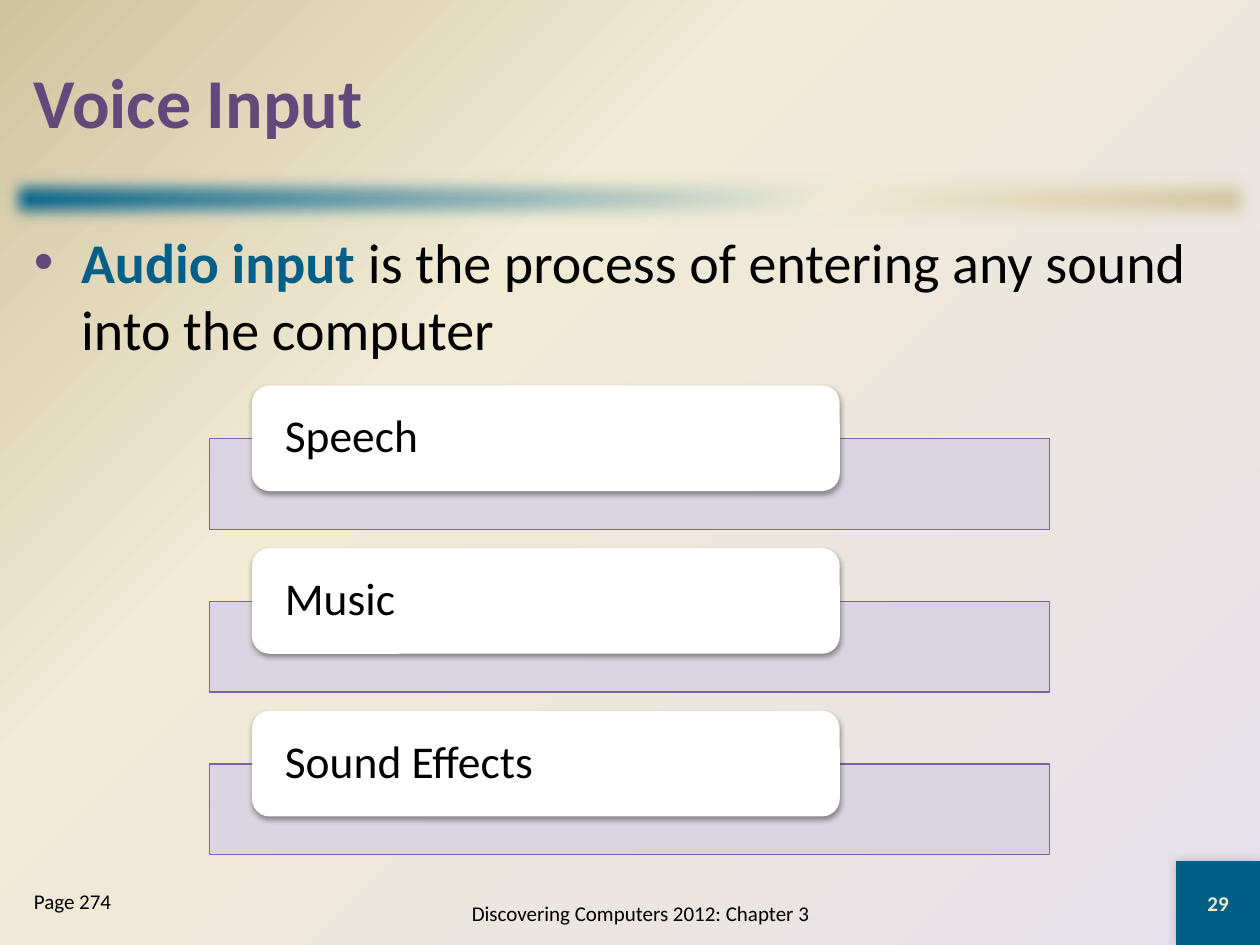
from pptx import Presentation
from pptx.dml.color import RGBColor
from pptx.enum.shapes import MSO_SHAPE
from pptx.enum.text import MSO_ANCHOR, MSO_AUTO_SIZE, PP_ALIGN
from pptx.oxml import parse_xml
from pptx.oxml.ns import nsdecls, qn
from pptx.util import Cm, Pt

COLORS = {
    "purple": "604A7B",
    "teal": "005F86",
    "black": "000000",
    "white": "FFFFFF",
    "cream": "F0EBD5",
    "sand": "D1C39F",
    "lavender": "E6E0EC",
    "band": "D8D3E0",
    "band_line": "8064A2",
    "number": "EEEBCA",
}


def format_run(r, size, color, bold=False):
    r.font.name = "Calibri"
    r.font.size = Pt(size)
    r.font.bold = bold
    r.font.color.rgb = RGBColor.from_string(COLORS[color])


def gradient(first, direction):
    stops = "".join(
        f'<a:gs pos="{pos * 1000}"><a:srgbClr val="{COLORS[name]}"/></a:gs>'
        for pos, name in ((0, first), (65, "cream"), (100, "sand"))
    )
    return parse_xml(
        f'<a:gradFill rotWithShape="1" {nsdecls("a")}><a:gsLst>{stops}</a:gsLst>{direction}</a:gradFill>'
    )


prs = Presentation()
prs.slide_width, prs.slide_height = Cm(25.4), Cm(19.05)
s = prs.slides.add_slide(prs.slide_layouts[3])
title, body, page = s.placeholders

s.background.fill.solid()
bg = s.element.find(".//" + qn("p:bgPr"))
bg.replace(bg[0], gradient(
    "lavender", '<a:path path="circle"><a:fillToRect l="100000" t="100000"/></a:path>'))

bar = s.shapes.add_shape(MSO_SHAPE.RECTANGLE, Cm(0), Cm(3.38), Cm(25.4), Cm(1.27))
bar.line.fill.background()
bar.shadow.inherit = False
props = bar.element.spPr
props.insert(2, gradient("teal", '<a:lin ang="2700000" scaled="0"/>'))
props.find(qn("a:effectLst")).append(
    parse_xml(f'<a:softEdge rad="127000" {nsdecls("a")}/>'))

number = s.shapes.add_shape(MSO_SHAPE.RECTANGLE, Cm(23.71), Cm(17.36), Cm(1.69), Cm(1.69))
footer = s.shapes.add_textbox(Cm(7.62), Cm(17.78), Cm(10.59), Cm(1.27))

for sp, left, top, width, height in (
    (title, 0.43, 0.43, 24.56, 3.18),
    (body, 0.43, 4.45, 24.56, 12.9),
    (page, 0.43, 17.78, 4.65, 1.27),
):
    sp.left, sp.top, sp.width, sp.height = Cm(left), Cm(top), Cm(width), Cm(height)

for sp, text, size, color, bold, align, anchor in (
    (title, "Voice Input", 40, "purple", True, PP_ALIGN.LEFT, MSO_ANCHOR.MIDDLE),
    (body, "Audio input ", 32, "teal", True, PP_ALIGN.LEFT, MSO_ANCHOR.TOP),
    (page, "Page 274", 12, "black", False, PP_ALIGN.LEFT, MSO_ANCHOR.TOP),
    (footer, "Discovering Computers 2012: Chapter 3", 12, "black", False,
     PP_ALIGN.CENTER, MSO_ANCHOR.MIDDLE),
    (number, "29", 12, "number", True, PP_ALIGN.CENTER, MSO_ANCHOR.MIDDLE),
):
    tf = sp.text_frame
    tf.text = text
    tf.word_wrap = True
    tf.auto_size = MSO_AUTO_SIZE.NONE
    tf.vertical_anchor = anchor
    p = tf.paragraphs[0]
    p.alignment = align
    p.space_before = Pt(0)
    format_run(p.runs[0], size, color, bold)

p = body.text_frame.paragraphs[0]
r = p.add_run()
r.text = "is the process of entering any sound into the computer"
format_run(r, 32, "black")
pPr = p._p.get_or_add_pPr()
pPr.set("marL", str(Cm(0.95)))
pPr.set("indent", str(-Cm(0.95)))
for xml in (
    f'<a:buClr {nsdecls("a")}><a:srgbClr val="{COLORS["purple"]}"/></a:buClr>',
    f'<a:buFont typeface="Arial" {nsdecls("a")}/>',
    f'<a:buChar char="•" {nsdecls("a")}/>',
):
    pPr.append(parse_xml(xml))

pPr = page.text_frame.paragraphs[0]._p.get_or_add_pPr()
pPr.set("marL", "0")
pPr.set("indent", "0")
pPr.append(parse_xml(f'<a:buNone {nsdecls("a")}/>'))

cards = []
for i, text in enumerate(("Speech", "Music", "Sound Effects")):
    offset = i * 3.28
    band = s.shapes.add_shape(
        MSO_SHAPE.RECTANGLE, Cm(4.23), Cm(8.84 + offset), Cm(16.93), Cm(1.83))
    band.shadow.inherit = False
    band.fill.solid()
    band.fill.fore_color.rgb = RGBColor.from_string(COLORS["band"])
    band.element.spPr.find(".//" + qn("a:srgbClr")).append(
        parse_xml(f'<a:alpha val="90000" {nsdecls("a")}/>'))
    band.line.color.rgb = RGBColor.from_string(COLORS["band_line"])
    band.line.width = Pt(0.75)

    card = s.shapes.add_shape(
        MSO_SHAPE.ROUNDED_RECTANGLE, Cm(5.08), Cm(7.77 + offset), Cm(11.85), Cm(2.13))
    tf = card.text_frame
    tf.text = text
    tf.word_wrap = True
    tf.vertical_anchor = MSO_ANCHOR.MIDDLE
    tf.margin_left = tf.margin_right = Cm(0.56)
    tf.margin_top = tf.margin_bottom = Cm(0)
    p = tf.paragraphs[0]
    p.alignment = PP_ALIGN.LEFT
    p.line_spacing = 0.9
    format_run(p.runs[0], 26, "black")
    cards.append(card)

shadowed = [(number, "teal", 20, 6, 0, 225)]
shadowed += [(card, "white", 38, 3.1, 1.6, 90) for card in cards]
for sp, color, alpha, blur, distance, angle in shadowed:
    sp.fill.solid()
    sp.fill.fore_color.rgb = RGBColor.from_string(COLORS[color])
    sp.line.fill.background()
    sp.shadow.inherit = False
    sp.element.spPr.find(qn("a:effectLst")).append(parse_xml(
        f'<a:outerShdw blurRad="{Pt(blur)}" dist="{Pt(distance)}" dir="{angle * 60000}" '
        f'rotWithShape="0" {nsdecls("a")}><a:srgbClr val="{COLORS["black"]}">'
        f'<a:alpha val="{alpha * 1000}"/></a:srgbClr></a:outerShdw>'))

prs.save("out.pptx")
